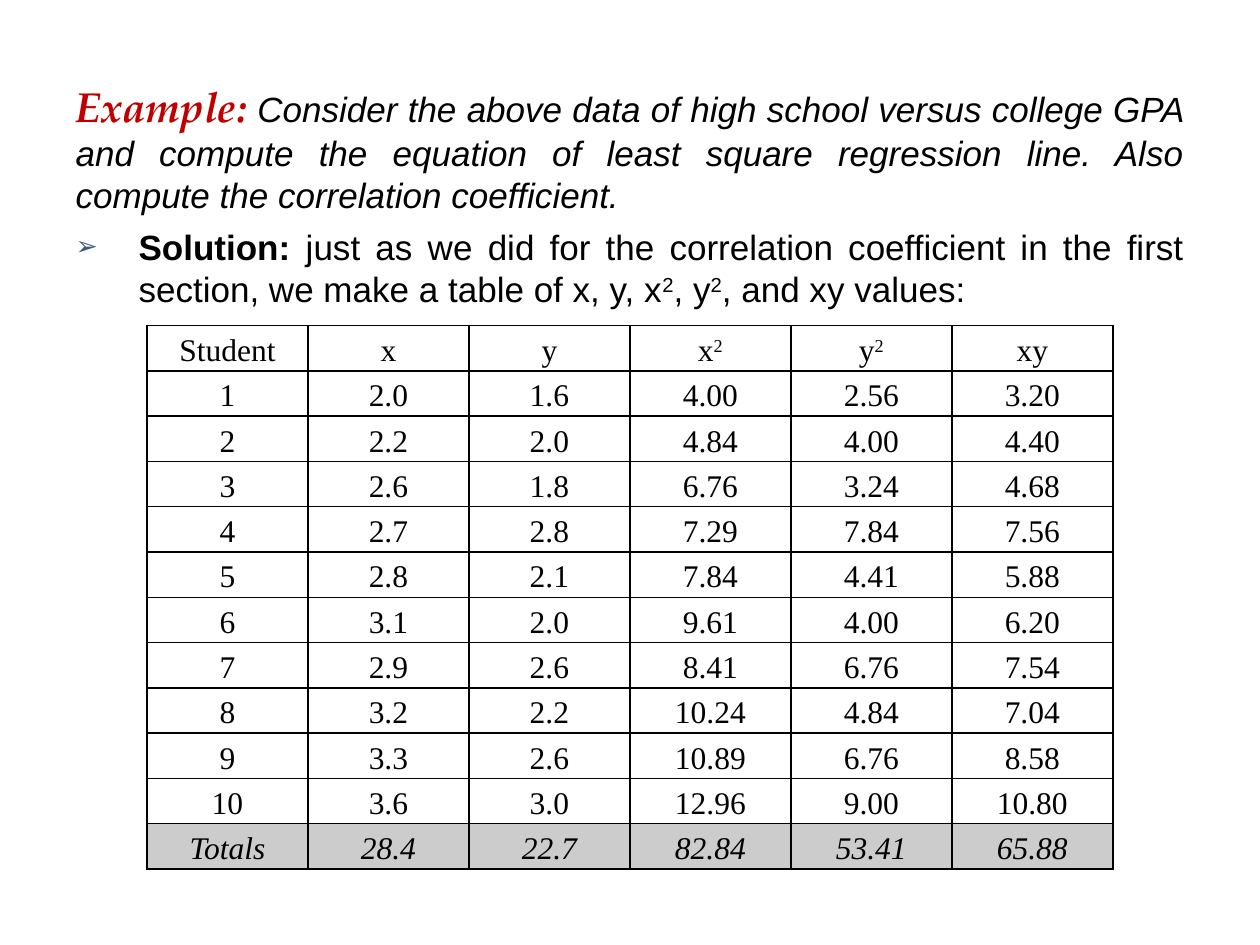
from lxml import etree
from pptx import Presentation
from pptx.dml.color import RGBColor
from pptx.enum.text import MSO_ANCHOR, PP_ALIGN
from pptx.oxml.ns import qn
from pptx.util import Pt

BLACK = RGBColor(0x00, 0x00, 0x00)
RED = RGBColor(0xC0, 0x00, 0x00)
SLATE = RGBColor(0x3E, 0x5D, 0x78)
GREY = RGBColor(0xCC, 0xCC, 0xCC)
CENTER, JUSTIFY = PP_ALIGN.CENTER, PP_ALIGN.JUSTIFY
MIDDLE = MSO_ANCHOR.MIDDLE
SANS, SERIF, TITLE = "Arial", "Times New Roman", "TeX Gyre Pagella"
BODY_BOX = (Pt(36), Pt(42.5), Pt(648), Pt(455))
GRID_BOX = (Pt(84), Pt(186), Pt(552), Pt(285))

HEAD = ["Student", "x", "y", "x²", "y²", "xy"]
ROWS = [
    ["1", "2.0", "1.6", "4.00", "2.56", "3.20"],
    ["2", "2.2", "2.0", "4.84", "4.00", "4.40"],
    ["3", "2.6", "1.8", "6.76", "3.24", "4.68"],
    ["4", "2.7", "2.8", "7.29", "7.84", "7.56"],
    ["5", "2.8", "2.1", "7.84", "4.41", "5.88"],
    ["6", "3.1", "2.0", "9.61", "4.00", "6.20"],
    ["7", "2.9", "2.6", "8.41", "6.76", "7.54"],
    ["8", "3.2", "2.2", "10.24", "4.84", "7.04"],
    ["9", "3.3", "2.6", "10.89", "6.76", "8.58"],
    ["10", "3.6", "3.0", "12.96", "9.00", "10.80"],
]
TOTALS = ["Totals", "28.4", "22.7", "82.84", "53.41", "65.88"]


def add_run(para, text, font, size, color=BLACK, bold=False, italic=False):
    run = para.add_run()
    run.text = text
    run.font.name, run.font.size = font, Pt(size)
    run.font.color.rgb = color
    run.font.bold, run.font.italic = bold, italic
    return run


def add_mixed(para, text, font, size, **style):
    """Add text, with each ² set as a raised 2."""
    for i, part in enumerate(text.split("²")):
        if i:
            run = add_run(para, "2", font, size, **style)
            run.font._element.set("baseline", "30000")
        if part:
            add_run(para, part, font, size, **style)


def set_bullet(para, char=None, indent=0):
    props = para._p.get_or_add_pPr()
    props.set("marL", str(Pt(indent)))
    props.set("indent", str(-Pt(indent)))
    if char is None:
        etree.SubElement(props, qn("a:buNone"))
        return
    color = etree.SubElement(props, qn("a:buClr"))
    etree.SubElement(color, qn("a:srgbClr"), val=str(SLATE))
    etree.SubElement(props, qn("a:buSzPct"), val="76000")
    etree.SubElement(props, qn("a:buFont"), typeface=SANS)
    etree.SubElement(props, qn("a:buChar"), char=char)


def fill_body(body, box):
    body.left, body.top, body.width, body.height = box
    frame = body.text_frame
    task = frame.paragraphs[0]
    set_bullet(task)
    task.space_before = Pt(0)
    add_run(task, "Example:", TITLE, 24, RED, bold=True, italic=True)
    add_run(task, " Consider the above data of high school versus college GPA "
            "and compute the equation of least square regression line. "
            "Also compute the correlation coefficient.", SANS, 20, italic=True)
    answer = frame.add_paragraph()
    set_bullet(answer, "➢", 36)
    answer.space_before = Pt(6)
    add_run(answer, "Solution:", SANS, 20, bold=True)
    add_mixed(answer, " just as we did for the correlation coefficient in the "
              "first section, we make a table of x, y, x², y², and xy values:",
              SANS, 20)
    for para in frame.paragraphs:
        para.alignment = JUSTIFY


def set_border(cell):
    props = cell._tc.get_or_add_tcPr()
    for i, side in enumerate(("lnL", "lnR", "lnT", "lnB")):
        line = etree.Element(qn("a:" + side), w=str(Pt(1)))
        fill = etree.SubElement(line, qn("a:solidFill"))
        etree.SubElement(fill, qn("a:srgbClr"), val=str(BLACK))
        props.insert(i, line)


def fill_cell(cell, text, total):
    cell.margin_left = cell.margin_right = Pt(1.5)
    cell.margin_top = cell.margin_bottom = Pt(1.5)
    cell.vertical_anchor = MIDDLE
    if total:
        cell.fill.solid()
        cell.fill.fore_color.rgb = GREY
    else:
        cell.fill.background()
    set_border(cell)
    para = cell.text_frame.paragraphs[0]
    para.alignment, para.line_spacing = CENTER, 1.15
    add_mixed(para, text, SERIF, 18, italic=total)


def add_grid(slide, box):
    data = [HEAD, *ROWS, TOTALS]
    grid = slide.shapes.add_table(len(data), len(HEAD), *box).table
    grid.first_row = grid.horz_banding = False
    for r, row in enumerate(data):
        for c, text in enumerate(row):
            fill_cell(grid.cell(r, c), text, row is TOTALS)


def main():
    deck = Presentation()
    deck.slide_width, deck.slide_height = Pt(720), Pt(540)
    slide = deck.slides.add_slide(deck.slide_layouts[1])
    title = slide.shapes.title._element
    title.getparent().remove(title)
    fill_body(slide.placeholders[1], BODY_BOX)
    add_grid(slide, GRID_BOX)
    deck.save("out.pptx")


if __name__ == "__main__":
    main()
